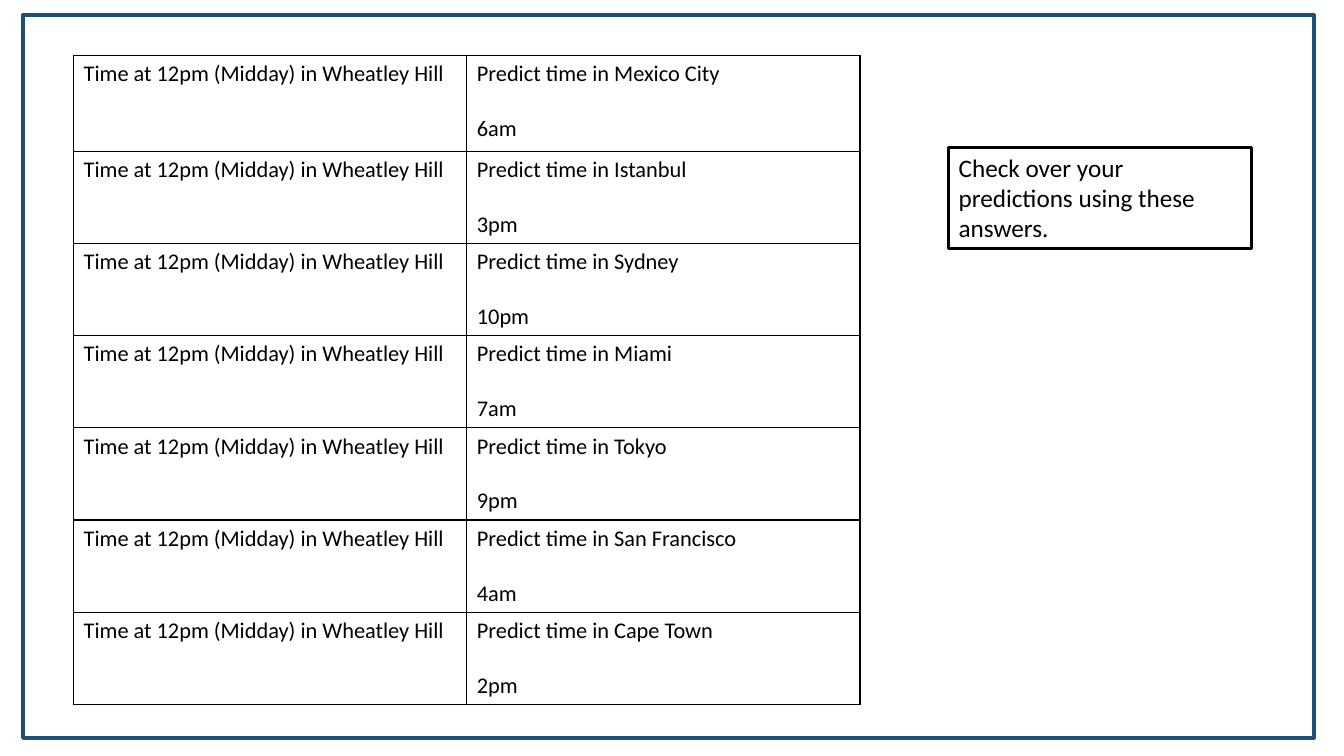
from dataclasses import dataclass

from lxml import etree
from pptx import Presentation
from pptx import util as u
from pptx.dml.color import RGBColor
from pptx.enum import shapes, text
from pptx.oxml.ns import qn


@dataclass(frozen=True)
class Theme:
    font: str = "Calibri"
    ink: str = "000000"
    frame: str = "1F4E79"
    cell: int = 16
    note: int = 18
    gap: float = 19.5


class Board:
    def __init__(self, slide, theme):
        self.slide = slide
        self.theme = theme

    def label(self, frame, lines, size, gap=0):
        frame.word_wrap = True
        for i, line in enumerate(lines):
            para = frame.paragraphs[0] if i == 0 else frame.add_paragraph()
            para.alignment = text.PP_ALIGN.LEFT
            para.space_before = u.Pt(gap if i else 0)
            run = para.add_run()
            run.text = line
            style = {"name": self.theme.font, "size": u.Pt(size)}
            for key, value in style.items():
                setattr(run.font, key, value)
            run.font.color.rgb = RGBColor.from_string(self.theme.ink)

    def box(self, place, color, width):
        shape = self.slide.shapes.add_shape(
            shapes.MSO_SHAPE.RECTANGLE, *map(u.Inches, place))
        shape.shadow.inherit = False
        shape.fill.background()
        shape.line.color.rgb = RGBColor.from_string(color)
        shape.line.width = u.Pt(width)
        return shape

    def note(self, place, words):
        frame = self.box(place, self.theme.ink, 2.25).text_frame
        frame.vertical_anchor = text.MSO_ANCHOR.TOP
        self.label(frame, [words], self.theme.note)

    def edge(self, cell):
        props = cell._tc.get_or_add_tcPr()
        for i, side in enumerate(("lnL", "lnR", "lnT", "lnB")):
            line = etree.Element(qn(f"a:{side}"), w=str(u.Pt(1)))
            fill = etree.SubElement(line, qn("a:solidFill"))
            etree.SubElement(fill, qn("a:srgbClr"), val=self.theme.ink)
            props.insert(i, line)

    def table(self, place, rows, heights):
        grid = self.slide.shapes.add_table(
            len(rows), len(rows[0]), *map(u.Inches, place)).table
        for key in ("first_row", "horz_banding"):
            setattr(grid, key, False)
        for r, (row, height) in enumerate(zip(rows, heights)):
            grid.rows[r].height = u.Inches(height)
            for c, lines in enumerate(row):
                cell = grid.cell(r, c)
                cell.fill.background()
                self.edge(cell)
                self.label(cell.text_frame, lines, self.theme.cell, self.theme.gap)


def main():
    deck = Presentation()
    deck.slide_width, deck.slide_height = u.Inches(13.33), u.Inches(7.5)
    theme = Theme()
    board = Board(deck.slides.add_slide(deck.slide_layouts[6]), theme)
    times = {
        "Mexico City": "6am",
        "Istanbul": "3pm",
        "Sydney": "10pm",
        "Miami": "7am",
        "Tokyo": "9pm",
        "San Francisco": "4am",
        "Cape Town": "2pm",
    }
    rows = [
        [["Time at 12pm (Midday) in Wheatley Hill"],
         [f"Predict time in {city}", time]]
        for city, time in times.items()
    ]
    heights = [0.95] + [0.9] * (len(rows) - 1)
    board.table((0.73, 0.55, 7.8, sum(heights)), rows, heights)
    board.note((9.41, 1.46, 3, 1.01), "Check over your predictions using these answers.")
    board.box((0.23, 0.15, 12.8, 7.17), theme.frame, 3)
    deck.save("out.pptx")


if __name__ == "__main__":
    main()
